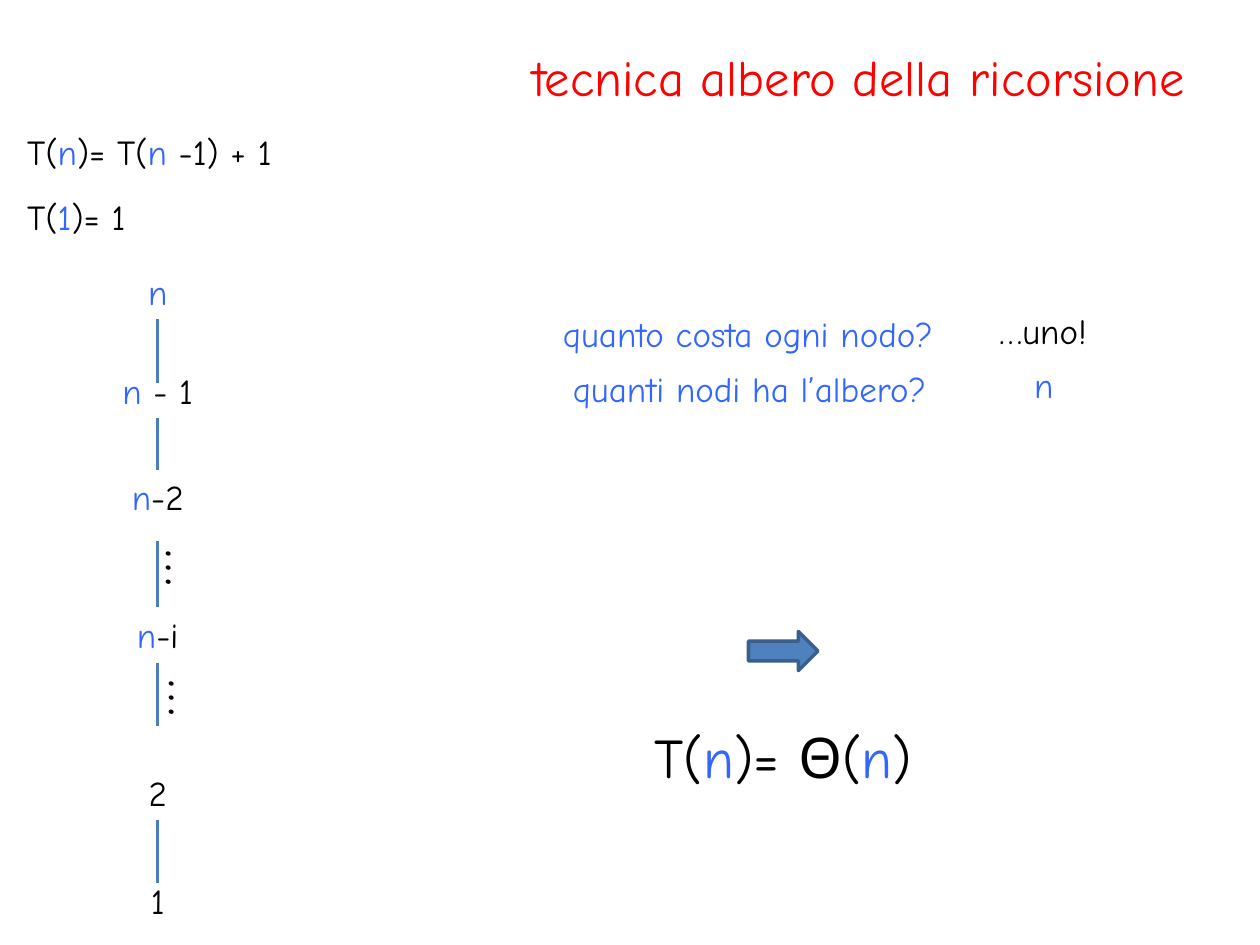
from lxml import etree
from pptx import Presentation
from pptx.dml.color import RGBColor
from pptx.enum.shapes import MSO_CONNECTOR, MSO_SHAPE
from pptx.enum.text import MSO_ANCHOR, MSO_AUTO_SIZE, PP_ALIGN
from pptx.oxml.ns import qn
from pptx.util import Cm, Pt

LEFT, CENTER, RIGHT = PP_ALIGN.LEFT, PP_ALIGN.CENTER, PP_ALIGN.RIGHT
STRAIGHT = MSO_CONNECTOR.STRAIGHT
FONT = "Comic Neue"
COLORS = {
    "title": "FF0000",
    "black": "000000",
    "blue": "3366FF",
    "edge": "4B7EBC",
    "arrow": "4F81BD",
    "arrow_line": "3A5F8C",
}


def color(name):
    return RGBColor.from_string(COLORS[name])


def write(shape, runs, size=20, align=LEFT):
    """Fill the shape's first paragraph with (text, colour name) runs."""
    shape.text_frame.word_wrap = True
    paragraph = shape.text_frame.paragraphs[0]
    paragraph.alignment = align
    for text, color_name in runs:
        run = paragraph.add_run()
        run.text = text
        run.font.name = FONT
        run.font.size = Pt(size)
        run.font.color.rgb = color(color_name)


prs = Presentation()
prs.slide_width, prs.slide_height = Cm(25.4), Cm(19.05)
slide = prs.slides.add_slide(prs.slide_layouts[5])
shapes = slide.shapes

title = shapes.title
title.left, title.top, title.width, title.height = Cm(1.27), Cm(0.76), Cm(22.86), Cm(1.55)
title.text_frame.vertical_anchor = MSO_ANCHOR.MIDDLE
title.text_frame.auto_size = MSO_AUTO_SIZE.NONE
write(title, [("tecnica albero della ricorsione", "title")], 28.8, RIGHT)

# Recurrence, questions with answers, and result: left, top, width, height, size, runs
statements = [
    (0.3, 2.51, 8.5, 1.11, 20, [("T(", "black"), ("n", "blue"), (")= T(", "black"),
                                ("n", "blue"), (" -1) + 1", "black")]),
    (0.3, 3.81, 3.2, 1.11, 20, [("T(", "black"), ("1", "blue"), (")= 1", "black")]),
    (11.1, 6.17, 8.6, 1.11, 20, [("quanto costa ogni nodo?", "blue")]),
    (19.89, 6.12, 3.2, 1.11, 20, [("…uno!", "black")]),
    (11.3, 7.29, 8.4, 1.11, 20, [("quanti nodi ha l’albero?", "blue")]),
    (20.6, 7.21, 1.5, 1.11, 20, [("n", "blue")]),
    (12.95, 14.45, 6.35, 1.62, 32, [("T(", "black"), ("n", "blue"), (")= Θ(", "black"),
                                    ("n", "blue"), (")", "black")]),
]
for left, top, width, height, size, runs in statements:
    write(shapes.add_textbox(Cm(left), Cm(top), Cm(width), Cm(height)), runs, size)

implies = shapes.add_shape(MSO_SHAPE.RIGHT_ARROW, Cm(15.09), Cm(12.73), Cm(1.4), Cm(0.79))
implies.shadow.inherit = False
implies.fill.solid()
implies.fill.fore_color.rgb = color("arrow")
implies.line.color.rgb = color("arrow_line")
implies.line.width = Pt(2)

# Recursion tree: a single chain around one vertical axis
AXIS = 3.18
NODE_WIDTH = 3

for start, end in [(6.43, 7.72), (8.43, 9.47), (10.9, 12.24), (13.36, 14.63), (16.54, 17.81)]:
    edge = shapes.add_connector(STRAIGHT, Cm(AXIS), Cm(start), Cm(AXIS), Cm(end))
    edge.line.color.rgb = color("edge")
    edge.line.width = Pt(1.5)
    etree.SubElement(edge.element.spPr, qn("a:effectLst"))

nodes = [
    (5.33, [("n", "blue")]),
    (7.32, [("n ", "blue"), ("- 1", "black")]),
    (9.47, [("n", "blue"), ("-2", "black")]),
    (12.24, [("n", "blue"), ("-i", "black")]),
    (15.42, [("2", "black")]),
    (17.6, [("1", "black")]),
]
for top, runs in nodes:
    node = shapes.add_textbox(Cm(AXIS - NODE_WIDTH / 2), Cm(top), Cm(NODE_WIDTH), Cm(1.11))
    write(node, runs, align=CENTER)

for left, top in [(3.3, 10.52), (3.36, 13.13)]:
    omitted_levels = shapes.add_textbox(Cm(left), Cm(top), Cm(1), Cm(1.62))
    omitted_levels.rotation = 90
    write(omitted_levels, [("…", "black")], 32)

prs.save("out.pptx")
